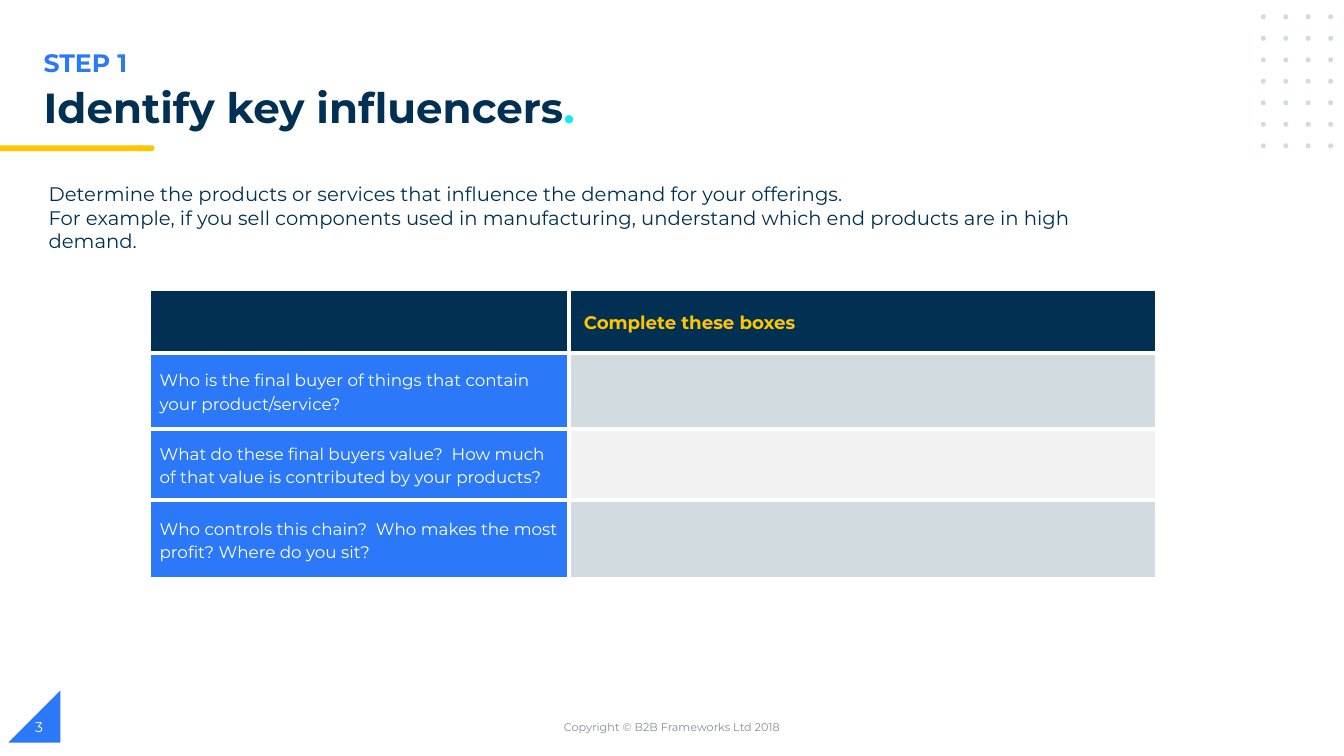
from dataclasses import dataclass
from itertools import product

from lxml.etree import SubElement
from pptx import Presentation
from pptx.dml.color import RGBColor
from pptx.enum.shapes import MSO_SHAPE
from pptx.enum.text import MSO_ANCHOR, MSO_AUTO_SIZE, PP_ALIGN
from pptx.oxml.ns import qn
from pptx.util import Inches, Pt


@dataclass(frozen=True)
class Theme:
    """Colours, font and type sizes."""
    face: str = "Montserrat"
    navy: str = "023053"
    blue: str = "2B79F8"
    gold: str = "FFC600"
    aqua: str = "0EECEC"
    mist: str = "D1DBE0"
    pale: str = "F2F2F2"
    grey: str = "888C97"
    white: str = "FFFFFF"
    title: float = 30
    step: float = 18
    body: float = 14
    head: float = 13
    cell: float = 12
    page: float = 10
    foot: float = 8


class Board:
    """Draws on one slide with a grid of 160 columns by 90 rows."""

    def __init__(self, deck, theme):
        """Add a title-only slide."""
        self.theme = theme
        self.slide = deck.slides.add_slide(deck.slide_layouts[5])
        self.col = deck.slide_width / 160
        self.row = deck.slide_height / 90

    def place(self, x, y, w, h):
        """Turn grid units into lengths."""
        return (round(x * self.col), round(y * self.row),
                round(w * self.col), round(h * self.row))

    def run(self, para, text, size, tint, bold=False):
        """Add one run to a paragraph."""
        piece = para.add_run()
        piece.text = text
        font = piece.font
        font.name, font.size, font.bold = self.theme.face, Pt(size), bold
        font.color.rgb = RGBColor.from_string(tint)

    def shape(self, kind, box, tint, flip=False):
        """Add a plain filled shape."""
        item = self.slide.shapes.add_shape(kind, *self.place(*box))
        item.shadow.inherit = False
        item.fill.solid()
        item.fill.fore_color.rgb = RGBColor.from_string(tint)
        item.line.fill.background()
        if flip:
            item._element.spPr.xfrm.set("flipH", "1")

    def text(self, box, lines, size, tint, bold=False,
             align=PP_ALIGN.LEFT, anchor=MSO_ANCHOR.TOP):
        """Add a text box with one paragraph."""
        frame = self.slide.shapes.add_textbox(*self.place(*box)).text_frame
        frame.word_wrap = True
        frame.vertical_anchor = anchor
        para = frame.paragraphs[0]
        para.alignment = align
        for spot, line in enumerate(lines):
            if spot:
                para.add_line_break()
            self.run(para, line, size, tint, bold)

    def title(self, box, parts):
        """Fill the title with coloured parts."""
        item = self.slide.shapes.title
        item.left, item.top, item.width, item.height = self.place(*box)
        frame = item.text_frame
        frame.auto_size = MSO_AUTO_SIZE.NONE
        frame.word_wrap = True
        frame.vertical_anchor = MSO_ANCHOR.TOP
        para = frame.paragraphs[0]
        para.alignment = PP_ALIGN.LEFT
        para.line_spacing = 0.9
        for text, tint in parts:
            self.run(para, text, self.theme.title, tint, True)

    def edge(self, cell):
        """Put thick white borders round a cell."""
        props = cell._tc.get_or_add_tcPr()
        for spot, side in enumerate(("lnL", "lnR", "lnT", "lnB")):
            line = props.makeelement(qn(f"a:{side}"), {"w": str(Pt(3))})
            fill = SubElement(line, qn("a:solidFill"))
            SubElement(fill, qn("a:srgbClr"), val=self.theme.white)
            props.insert(spot, line)

    def cell(self, cell, fill, text, size, tint, bold, inset):
        """Style one table cell."""
        cell.fill.solid()
        cell.fill.fore_color.rgb = RGBColor.from_string(fill)
        self.edge(cell)
        cell.vertical_anchor = MSO_ANCHOR.MIDDLE
        cell.margin_left, cell.margin_right = Inches(inset), Inches(0.1)
        cell.margin_top = cell.margin_bottom = 0
        if text:
            para = cell.text_frame.paragraphs[0]
            para.line_spacing = 1.15
            self.run(para, text, size, tint, bold)

    def table(self, x, y, wide, high, head, asks):
        """Add a header row and a question on each row below."""
        look = self.theme
        box = self.place(x, y, sum(wide), sum(high))
        grid = self.slide.shapes.add_table(len(high), len(wide), *box).table
        grid.first_row = grid.horz_banding = False
        for column, size in zip(grid.columns, wide):
            column.width = round(size * self.col)
        for row, size in zip(grid.rows, high):
            row.height = round(size * self.row)
        for spot, text in enumerate(head):
            self.cell(grid.cell(0, spot), look.navy, text,
                      look.head, look.gold, True, 0.15)
        for spot, text in enumerate(asks, 1):
            band = look.mist if spot % 2 else look.pale
            for side, (fill, word) in enumerate(((look.blue, text), (band, ""))):
                self.cell(grid.cell(spot, side), fill, word,
                          look.cell, look.white, False, 0.1)


def main():
    """Build and save the slide."""
    deck = Presentation()
    deck.slide_width, deck.slide_height = Inches(13.33), Inches(7.5)
    look = Theme()
    board = Board(deck, look)

    board.shape(MSO_SHAPE.RIGHT_TRIANGLE, (1, 82.2, 6.2, 6.2), look.blue, True)
    board.shape(MSO_SHAPE.FLOWCHART_TERMINATOR, (16.1, 17.3, 2.3, 0.7), look.gold)
    board.shape(MSO_SHAPE.RECTANGLE, (0, 17.3, 16.9, 0.7), look.gold)
    for row, col in product(range(7), range(4)):
        board.shape(MSO_SHAPE.OVAL,
                    (150.1 + 2.67 * col, 1.7 + 2.56 * row, 0.6, 0.6), look.mist)

    board.text((4, 5, 80.3, 4.8), ["STEP 1"], look.step, look.blue, True)
    board.title((4, 9.8, 93, 4.8),
                [("Identify key influencers", look.navy), (".", look.aqua)])
    board.text((4.6, 21.1, 134.9, 6.8), [
        "Determine the products or services that influence the demand for your offerings.",
        "For example, if you sell components used in manufacturing, "
        "understand which end products are in high demand.",
    ], look.body, look.navy)
    board.table(17.8, 34.4, (49.9, 70), (7.6, 9.1, 8.4, 9.4),
                ("", "Complete these boxes"), (
        "Who is the final buyer of things that contain your product/service?",
        "What do these final buyers value?  How much of that value is "
        "contributed by your products?",
        "Who controls this chain?  Who makes the most profit? Where do you sit?",
    ))
    board.text((53, 84.2, 54, 4.8), ["Copyright © B2B Frameworks Ltd 2018"],
               look.foot, look.grey, align=PP_ALIGN.CENTER, anchor=MSO_ANCHOR.MIDDLE)
    board.text((3, 84.2, 36, 4.8), ["3"], look.page, look.white,
               anchor=MSO_ANCHOR.MIDDLE)
    deck.save("out.pptx")


if __name__ == "__main__":
    main()
